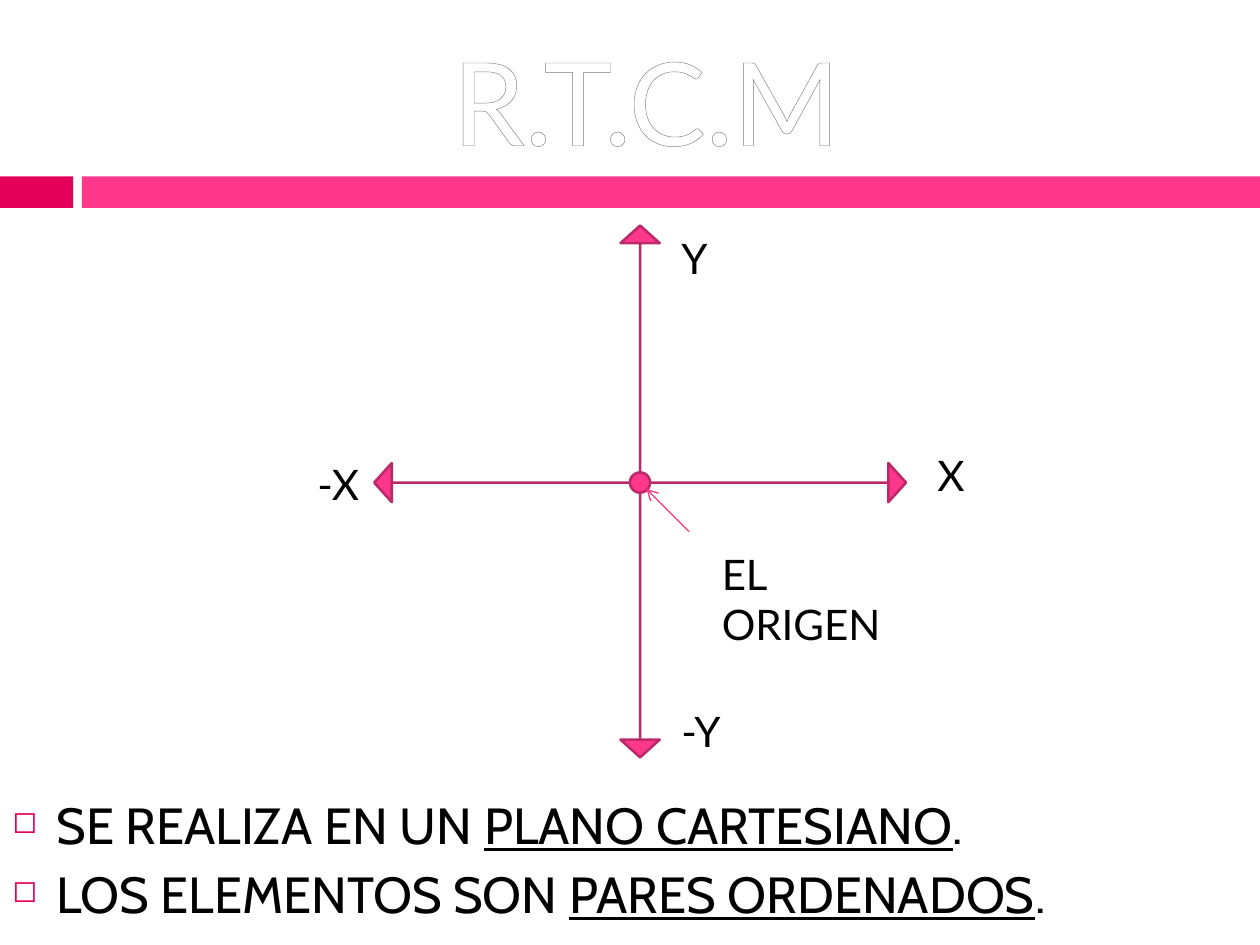
from lxml import etree
from pptx import Presentation
from pptx.dml.color import RGBColor
from pptx.enum import shapes, text
from pptx.oxml import ns
from pptx.util import Inches, Pt

ROSE = RGBColor(0xE4, 0x00, 0x59)
PINK = RGBColor(0xFF, 0x38, 0x8C)
PLUM = RGBColor(0xBD, 0x29, 0x68)
BLACK = RGBColor(0, 0, 0)
KIND = shapes.MSO_SHAPE


def node(root, tag, **attrs):
    return etree.SubElement(root, ns.qn(tag), attrs)


def paint(root, color):
    node(node(root, "a:solidFill"), "a:srgbClr", val=color)


def block(slide, kind, box, fill, line=None):
    shape = slide.shapes.add_shape(kind, *map(Inches, box))
    shape.shadow.inherit = False
    shape.fill.solid()
    shape.fill.fore_color.rgb = fill
    if line is None:
        shape.line.fill.background()
    else:
        shape.line.color.rgb = line
        shape.line.width = Pt(1.5)
    return shape


def write(slide, box, parts, size, font, wrap=True):
    frame = slide.shapes.add_textbox(*map(Inches, box)).text_frame
    frame.word_wrap = wrap
    para = frame.paragraphs[0]
    for part in parts:
        run = para.add_run()
        run.text = part
        run.font.size = Pt(size)
        run.font.name = font
        run.font.color.rgb = BLACK
    return frame


def title(slide, box):
    frame = write(slide, box, ["R.T.C.M"], 66, "Lato")
    frame.vertical_anchor = text.MSO_ANCHOR.MIDDLE
    para = frame.paragraphs[0]
    para.alignment = text.PP_ALIGN.CENTER
    props = para.runs[0].font._element
    props.remove(props.find(ns.qn("a:solidFill")))
    line = node(props, "a:ln", w=str(Pt(0.83)))
    paint(line, "7D7D7D")
    fade = node(props, "a:gradFill")
    stops = node(fade, "a:gsLst")
    for place, color in ((0, "FFFFFF"), (9, "FFFFFF"), (50, "7F7F7F"),
                         (79, "FFFFFF"), (100, "FFFFFF")):
        stop = node(stops, "a:gs", pos=str(place * 1000))
        node(stop, "a:srgbClr", val=color)
    node(fade, "a:lin", ang="5400000", scaled="0")
    props.insert(0, line)
    props.insert(1, fade)


def band(slide, box):
    left, top, width, height = box
    tab, gap = 0.58, 0.07
    block(slide, KIND.RECTANGLE, (left, top, tab, height), ROSE)
    start = left + tab + gap
    block(slide, KIND.RECTANGLE, (start, top, width - tab - gap, height), PINK)


def axis(slide, box, turn=0):
    arrow = block(slide, KIND.LEFT_RIGHT_ARROW, box, PINK, PLUM)
    arrow.adjustments[0] = 0
    arrow.adjustments[1] = 0.45
    arrow.rotation = turn


def plane(slide, box):
    left, top, width, height = box
    midx, midy = left + width / 2, top + height / 2
    thick, dot = 0.31, 0.16
    axis(slide, (left, midy - thick / 2 - 0.07, width, thick))
    axis(slide, (left, midy - thick / 2, width, thick), 90)
    block(slide, KIND.FLOWCHART_CONNECTOR,
          (midx - dot / 2, midy - dot / 2 - 0.07, dot, dot), PINK, PLUM)

    ends = (midx + 0.39, midy + 0.32, midx + 0.05, midy - 0.02)
    link = slide.shapes.add_connector(
        shapes.MSO_CONNECTOR.STRAIGHT, *map(Inches, ends))
    link.line.color.rgb = PINK
    link.line.width = Pt(0.79)
    node(link.line._get_or_add_ln(), "a:tailEnd", type="arrow")
    node(link._element.spPr, "a:effectLst")

    write(slide, (midx + 0.55, midy + 0.4, 1.72, 0.91), ["EL ORIGEN"], 24, "Lato")
    for name, x, y, wide in (("Y", 5.31, 1.8, 0.44), ("-Y", 5.31, 5.55, 0.58),
                             ("X", 7.34, 3.52, 0.45), ("-X", 2.42, 3.59, 0.59)):
        spot = (left + x - 2.97, top + y - 1.79, wide, 0.5)
        write(slide, spot, [name], 24, "Lato", False)


def point(slide, box, parts):
    para = write(slide, box, parts, 29, "Cabin").paragraphs[0]
    para.space_before = Pt(7)
    para.runs[1].font.underline = True
    props = para._p.get_or_add_pPr()
    props.set("marL", str(Inches(0.35)))
    props.set("indent", str(-Inches(0.35)))
    node(node(props, "a:buClr"), "a:srgbClr", val=str(ROSE))
    node(props, "a:buSzPct", val="60000")
    node(props, "a:buChar", char="◻")


def main():
    deck = Presentation()
    deck.slide_width = Inches(10)
    deck.slide_height = Inches(7.5)
    slide = deck.slides.add_slide(deck.slide_layouts[6])
    band(slide, (0, 1.4, 10, 0.25))
    title(slide, (0.67, 0.25, 8.92, 1.08))
    plane(slide, (2.97, 1.79, 4.22, 4.22))
    point(slide, (0, 6.25, 8.67, 0.63),
          ["SE REALIZA EN UN ", "PLANO CARTESIANO", "."])
    point(slide, (0, 6.8, 8.67, 0.7),
          ["LOS ELEMENTOS SON ", "PARES ORDENADOS", "."])
    deck.save("out.pptx")


if __name__ == "__main__":
    main()
